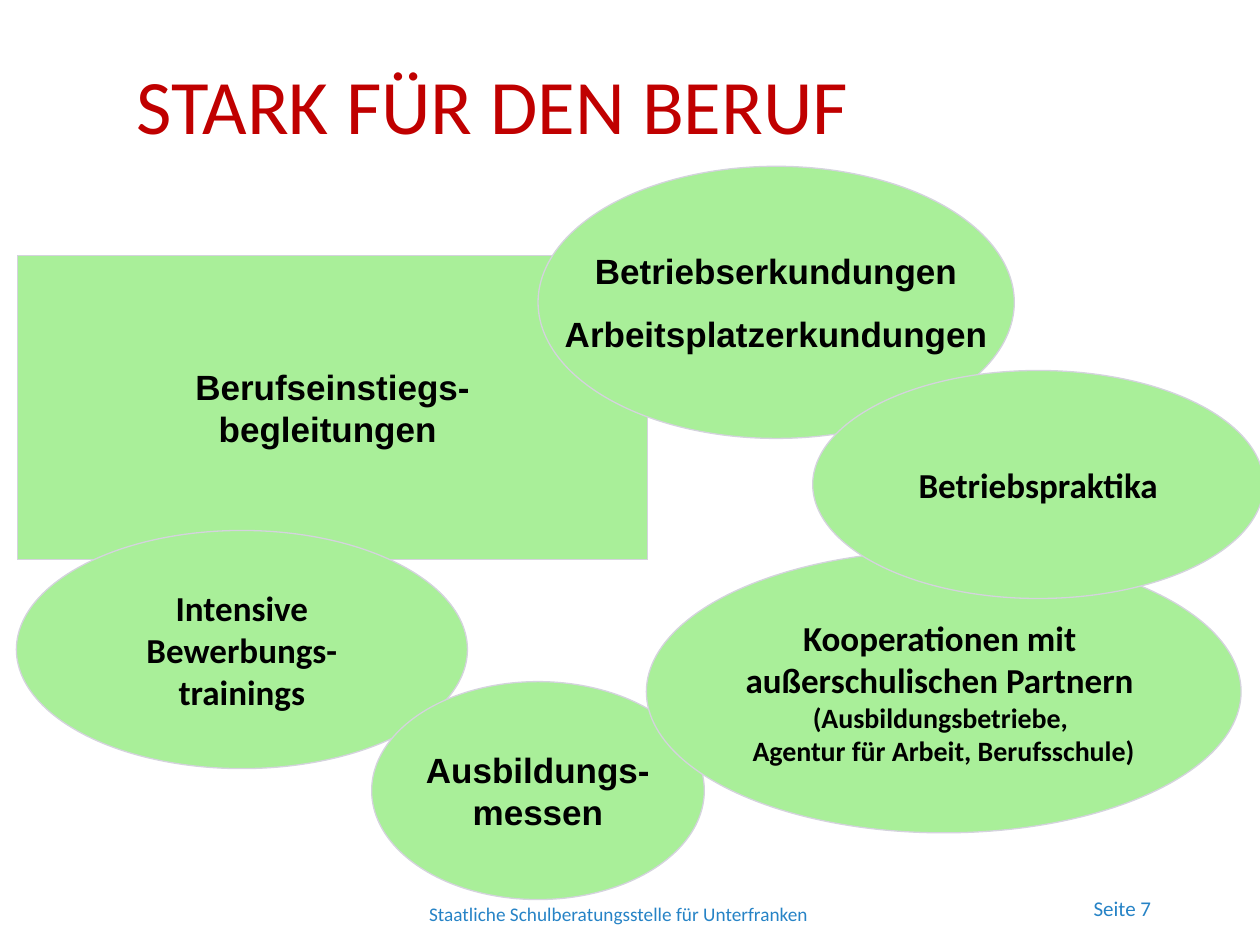
import pptx
import pptx.util
import pptx.dml.color
import pptx.enum.shapes
import pptx.enum.text

Pt = pptx.util.Pt
RGBColor = pptx.dml.color.RGBColor
MSO_SHAPE = pptx.enum.shapes.MSO_SHAPE
PP_ALIGN = pptx.enum.text.PP_ALIGN
MSO_ANCHOR = pptx.enum.text.MSO_ANCHOR

RED = RGBColor(0xC0, 0x00, 0x00)
GREEN = RGBColor(0xA9, 0xEF, 0x99)
GREY = RGBColor(0xD4, 0xD3, 0xDD)
BLUE = RGBColor(0x26, 0x83, 0xC6)
BLACK = RGBColor(0x00, 0x00, 0x00)

prs = pptx.Presentation()
prs.slide_width = pptx.util.Inches(10)
prs.slide_height = pptx.util.Inches(7.5)
COL = prs.slide_width / 100
ROW = prs.slide_height / 75
s = prs.slides.add_slide(prs.slide_layouts[5])


def grid(left, top, width, height):
    return int(left * COL), int(top * ROW), int(width * COL), int(height * ROW)


def style(p, font, size, color, align, bold=False):
    p.alignment = align
    for r in p.runs:
        r.font.name = font
        r.font.size = Pt(size)
        r.font.bold = bold
        r.font.color.rgb = color


footers = [
    ("Staatliche Schulberatungsstelle für Unterfranken", (30.9, 71.1, 36.4, 2.9), 11, PP_ALIGN.CENTER),
    ("Seite 7  ", (71.4, 70.6, 21.7, 3), 12, PP_ALIGN.RIGHT),
]
for text, box, size, align in footers:
    sp = s.shapes.add_textbox(*grid(*box))
    tf = sp.text_frame
    tf.word_wrap = True
    tf.text = text
    style(tf.paragraphs[0], "Calibri", size, BLUE, align)

title = s.shapes.title
title.left, title.top, title.width, title.height = grid(0, 3.7, 78.2, 8.8)
tf = title.text_frame
tf.text = "STARK FÜR DEN BERUF"
tf.word_wrap = True
tf.vertical_anchor = MSO_ANCHOR.BOTTOM
tf.paragraphs[0].line_spacing = 0.9
style(tf.paragraphs[0], "Calibri", 44, RED, PP_ALIGN.CENTER)

RECT, OVAL = MSO_SHAPE.RECTANGLE, MSO_SHAPE.OVAL
offers = [
    (RECT, (1.4, 20.3, 50, 24.1), "Arial", 0,
     [("Berufseinstiegs-", 20), ("begleitungen ", 20)]),
    (OVAL, (42.7, 13.2, 37.8, 21.6), "Arial", 12,
     [("Betriebserkundungen", 20), ("Arbeitsplatzerkundungen", 20)]),
    (OVAL, (1.3, 42.1, 35.8, 18.9), "Calibri", 0,
     [("Intensive", 20), ("Bewerbungs-", 20), ("trainings", 20)]),
    (OVAL, (29.5, 54.1, 26.4, 17.3), "Arial", 0,
     [("Ausbildungs-", 20), ("messen", 20)]),
    (OVAL, (51.3, 43.7, 47.2, 22.4), "Calibri", 0,
     [("Kooperationen mit ", 20), ("außerschulischen Partnern ", 20),
      ("(Ausbildungsbetriebe, ", 16), ("Agentur für Arbeit, Berufsschule)", 16)]),
    (OVAL, (64.5, 29.4, 35.8, 18.1), "Calibri", 0,
     [("Betriebspraktika", 20)]),
]
for kind, box, font, gap, lines in offers:
    sp = s.shapes.add_shape(kind, *grid(*box))
    sp.shadow.inherit = False
    sp.fill.solid()
    sp.fill.fore_color.rgb = GREEN
    sp.line.color.rgb = GREY
    sp.line.width = Pt(0.75)
    tf = sp.text_frame
    tf.word_wrap = False
    tf.vertical_anchor = MSO_ANCHOR.MIDDLE
    tf.text = "\n".join(text for text, size in lines)
    for p, (text, size) in zip(tf.paragraphs, lines):
        style(p, font, size, BLACK, PP_ALIGN.CENTER, bold=True)
    for p in tf.paragraphs[1:]:
        p.space_before = Pt(gap)

prs.save("out.pptx")
